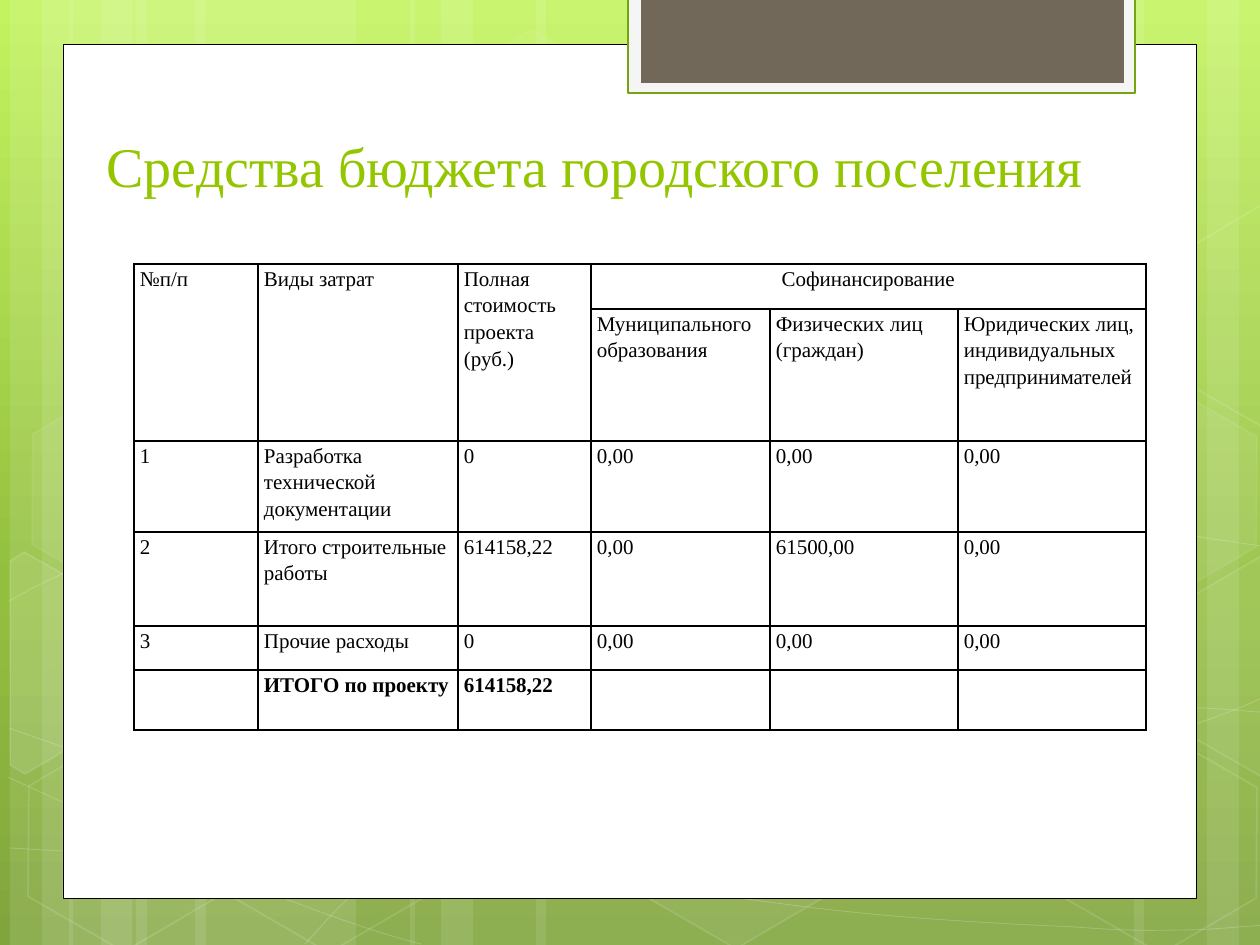
from math import cos, radians, sin

from lxml.etree import SubElement
from pptx import Presentation
from pptx.dml.color import RGBColor
from pptx.enum.shapes import MSO_SHAPE as Preset
from pptx.enum.text import MSO_ANCHOR as Anchor, PP_ALIGN as Align
from pptx.oxml.ns import qn
from pptx.util import Pt

FONT = "Times New Roman"
WHITE, BLACK = "FFFFFF", "000000"
SLIDE = (0, 0, 1260, 945)
TILT = 30
GRADIENT = [(0, "C3F35F"), (62, "93BF3F"), (100, "81A53E")]
STRIPE_LEFTS = [136, 10, 42, 195, 69, 101, 924, 1207, 1134, 536, 410, 441]
STRIPE_WIDTHS = [220, 63, 105] * 3 + [388, 63, 105]
CURVES = [
    [(9, 848), (77, 852), (145, 856), (239, 854), (334, 853), (451, 851), (577, 838),
     (703, 825), (882, 801), (998, 777), (1113, 753), (1231, 716), (1269, 694)],
    [(9, 601), (45, 581), (82, 562), (152, 543), (224, 524), (326, 499), (437, 488),
     (549, 479), (685, 478), (824, 488), (963, 498), (1193, 537), (1269, 547)],
    [(8, 777), (160, 847), (311, 916), (421, 944)],
    [(9, 728), (48, 742), (88, 756), (161, 776), (234, 795), (344, 827), (450, 848),
     (554, 869), (687, 892), (791, 905), (896, 919), (1008, 924), (1075, 927),
     (1140, 932), (1158, 930), (1191, 930), (1223, 929), (1246, 926), (1269, 925)],
    [(305, 944), (328, 919), (350, 893), (381, 871), (411, 848), (454, 823), (489, 805),
     (524, 788), (546, 780), (592, 767), (638, 754), (722, 737), (766, 728),
     (811, 719), (818, 719), (857, 717), (896, 713), (958, 709), (1000, 708),
     (1045, 707), (1116, 708), (1116, 708), (1144, 708), (1173, 708), (1201, 708),
     (1223, 709), (1245, 711), (1256, 712), (1260, 712), (1264, 712), (1268, 713)],
]
HEXAGONS = [(421, 45, 4, 8), (626, 742, 6, 12), (14, 745, 0, 12), (18, 393, 7, 8),
            (219, 746, 0, 12), (949, 571, 10, 12), (1051, 747, 0, 12), (1051, 396, 7, 8)]
CUT_HEXAGONS = [
    ((45, 674), 10, [(10, 561), (24, 552), (121, 607), (120, 718), (25, 774), (10, 765)]),
    ((1241, 655), 4, [(1167, 611), (1261, 556), (1271, 562), (1271, 772), (1263, 777),
                      (1167, 722)]),
    ((1241, 304), 0, [(1167, 261), (1261, 205), (1273, 212), (1271, 422), (1263, 427),
                      (1167, 372)]),
]
COLUMNS = [124, 200, 133, 179, 188, 188]
ROWS = [45, 132, 91, 94, 44, 60]
CELLS = [
    ["№п/п", "Виды затрат", "Полная стоимость проекта (руб.)", "Софинансирование", "", ""],
    ["", "", "", "Муниципального образования", "Физических лиц (граждан)",
     "Юридических лиц, индивидуальных предпринимателей"],
    ["1", "Разработка технической документации", "0", "0,00", "0,00", "0,00"],
    ["2", "Итого строительные работы", "614158,22", "0,00", "61500,00", "0,00"],
    ["3", "Прочие расходы", "0", "0,00", "0,00", "0,00"],
    ["", "ИТОГО по проекту", "614158,22", "", "", ""],
]
MERGES = [((0, 0), (1, 0)), ((0, 1), (1, 1)), ((0, 2), (1, 2)), ((0, 3), (0, 5))]


def px(length):
    """Turn pixels into EMU."""
    return round(length * 914400 / 126)


def color(value):
    """Turn a hex string into a colour."""
    return RGBColor.from_string(value)


def paint(fill, value, opacity=100):
    """Give a fill a solid colour, with an opacity in percent."""
    if not opacity:
        fill.background()
        return
    fill.solid()
    fill.fore_color.rgb = color(value)
    if opacity < 100:
        for node in fill._xPr.iter(qn("a:srgbClr")):
            SubElement(node, qn("a:alpha"), val=str(opacity * 1000))


def style(shape, fill, fill_opacity=100, line=None, width=1, line_opacity=100):
    """Set the fill and the outline of a shape and drop its shadow."""
    shape.shadow.inherit = False
    paint(shape.fill, fill, fill_opacity)
    if line:
        shape.line.width = Pt(width)
        paint(shape.line.fill, line, line_opacity)
    else:
        shape.line.fill.background()


def add_preset(slide, preset, box):
    """Add a preset shape in a pixel box."""
    return slide.shapes.add_shape(preset, *map(px, box))


def add_outline(slide, points, close):
    """Add a freeform through pixel points."""
    first, *rest = [(px(x), px(y)) for x, y in points]
    builder = slide.shapes.build_freeform(*first)
    builder.add_line_segments(rest, close=close)
    return builder.convert_to_shape()


def add_curve(slide, points):
    """Add an open chain of cubic curves."""
    shape = add_outline(slide, points, False)
    outline = next(shape.element.iter(qn("a:path")))
    lines = outline.findall(qn("a:lnTo"))
    for start in range(0, len(lines), 3):
        cubic = SubElement(outline, qn("a:cubicBezTo"))
        for line in lines[start:start + 3]:
            cubic.append(line[0])
            outline.remove(line)
    return shape


def turn_back(points, pivot):
    """Turn points by the negative tilt around a pivot."""
    c, s = cos(radians(TILT)), sin(radians(TILT))
    offsets = [(x - pivot[0], y - pivot[1]) for x, y in points]
    return [(pivot[0] + x * c + y * s, pivot[1] - x * s + y * c) for x, y in offsets]


def add_background(slide, box):
    """Draw the gradient, stripes, curves and hexagons behind the page."""
    left, top, _, height = box
    fill = slide.background.fill
    fill.gradient()
    fill.gradient_angle = 270
    stops = next(slide.element.iter(qn("a:gsLst")))
    for stop in list(stops):
        stops.remove(stop)
    for position, value in GRADIENT:
        stop = SubElement(stops, qn("a:gs"), pos=str(position * 1000))
        SubElement(stop, qn("a:srgbClr"), val=value)
    for x, stripe_width in zip(STRIPE_LEFTS, STRIPE_WIDTHS):
        stripe = (left + x, top, stripe_width, height)
        style(add_preset(slide, Preset.RECTANGLE, stripe), WHITE, 10)
    for points in CURVES:
        style(add_curve(slide, points), WHITE, 0, WHITE, 0.5, 20)
    for x, y, fill_opacity, line_opacity in HEXAGONS:
        hexagon = add_preset(slide, Preset.HEXAGON, (left + x, top + y, 220, 192))
        hexagon.adjustments[0] = 0.285
        hexagon.rotation = TILT
        style(hexagon, WHITE, fill_opacity, WHITE, 1, line_opacity)
    for pivot, fill_opacity, points in CUT_HEXAGONS:
        hexagon = add_outline(slide, turn_back(points, pivot), True)
        hexagon.rotation = TILT
        style(hexagon, WHITE, fill_opacity, WHITE, 1, 12)


def add_page(slide, box):
    """Draw the white page with the tab on its top edge."""
    left, top, _, _ = box
    style(add_preset(slide, Preset.RECTANGLE, box), WHITE, line=BLACK, width=0.5)
    tab = add_preset(slide, Preset.RECTANGLE, (left + 565, top - 47, 507, 95))
    style(tab, "F5F5F5", line="74A510", width=1.25)
    inner = add_preset(slide, Preset.RECTANGLE, (left + 578, top - 47, 483, 85))
    style(inner, "71685A")


def add_run(paragraph, text, size, value, bold=False):
    """Add one formatted run to a paragraph."""
    run = paragraph.add_run()
    run.text = text
    run.font.name, run.font.size, run.font.bold = FONT, Pt(size), bold
    run.font.color.rgb = color(value)


def place_title(slide, box):
    """Move the title in front and write it."""
    title = slide.shapes.title
    title.element.getparent().append(title.element)
    title.left, title.top, title.width, title.height = map(px, box)
    frame = title.text_frame
    frame.word_wrap = True
    frame.vertical_anchor = Anchor.BOTTOM
    paragraph = frame.paragraphs[0]
    paragraph.alignment = Align.LEFT
    add_run(paragraph, "Средства бюджета городского поселения", 32, "94C600")


def format_cell(cell, text, bold, centered):
    """Set the borders, margins and text of a table cell."""
    properties = cell._tc.get_or_add_tcPr()
    for side in ("lnL", "lnR", "lnT", "lnB"):
        border = SubElement(properties, qn(f"a:{side}"), w=str(Pt(1)))
        SubElement(SubElement(border, qn("a:solidFill")), qn("a:srgbClr"), val=BLACK)
    cell.fill.background()
    cell.margin_left = cell.margin_right = px(6)
    cell.margin_top = cell.margin_bottom = 0
    if text:
        paragraph = cell.text_frame.paragraphs[0]
        paragraph.line_spacing = 1.15
        paragraph.alignment = Align.CENTER if centered else Align.LEFT
        add_run(paragraph, text, 12, BLACK, bold)


def add_cost_table(slide, box):
    """Add the table of project costs."""
    table = slide.shapes.add_table(len(ROWS), len(COLUMNS), *map(px, box)).table
    table.first_row = table.horz_banding = False
    for column, width in zip(table.columns, COLUMNS):
        column.width = px(width)
    for row, height in zip(table.rows, ROWS):
        row.height = px(height)
    for r, texts in enumerate(CELLS):
        for c, text in enumerate(texts):
            format_cell(table.cell(r, c), text, r == len(ROWS) - 1, (r, c) == (0, 3))
    for start, end in MERGES:
        table.cell(*start).merge(table.cell(*end))


def main():
    """Build and save the slide."""
    presentation = Presentation()
    presentation.slide_width, presentation.slide_height = map(px, SLIDE[2:])
    slide = presentation.slides.add_slide(presentation.slide_layouts[5])
    add_background(slide, SLIDE)
    add_page(slide, (63, 45, 1134, 854))
    place_title(slide, (94, 142, 1018, 63))
    add_cost_table(slide, (134, 264, sum(COLUMNS), sum(ROWS)))
    presentation.save("out.pptx")


if __name__ == "__main__":
    main()
